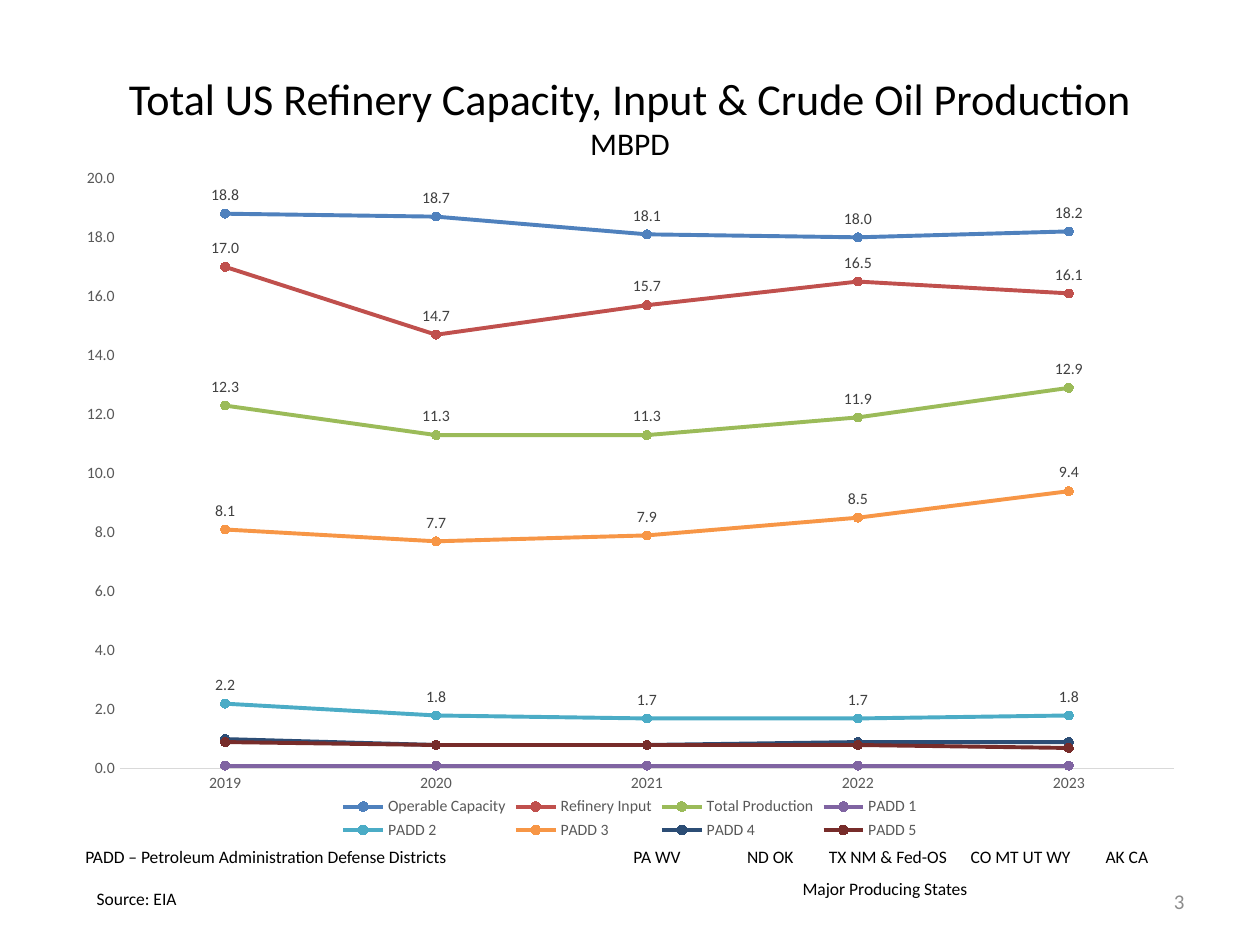
from dataclasses import dataclass

import lxml.etree
import pptx
import pptx.chart.data
import pptx.dml.color
import pptx.enum.chart
import pptx.enum.text
import pptx.oxml
import pptx.oxml.ns
import pptx.util

Cm, Pt = pptx.util.Cm, pptx.util.Pt
ALIGN = pptx.enum.text.PP_ALIGN
ANCHOR = pptx.enum.text.MSO_ANCHOR
FIT = pptx.enum.text.MSO_AUTO_SIZE
CHART = pptx.enum.chart


@dataclass(frozen=True)
class Theme:
    font: str = "Calibri"
    text: str = "000000"
    axis_text: str = "595959"
    label_text: str = "404040"
    page_text: str = "8C8C8C"
    axis_line: str = "D9D9D9"
    title_size: float = 25.2
    unit_size: float = 18
    page_size: float = 12
    note_size: float = 10
    chart_size: float = 9
    series_width: float = 2.25
    axis_width: float = 0.75
    marker_size: int = 5


THEME = Theme()
YEARS = ["2019", "2020", "2021", "2022", "2023"]
SERIES = [
    ("Operable Capacity", [18.8, 18.7, 18.1, 18, 18.2], "4F81BD", True),
    ("Refinery Input", [17, 14.7, 15.7, 16.5, 16.1], "C0504D", True),
    ("Total Production", [12.3, 11.3, 11.3, 11.9, 12.9], "9BBB59", True),
    ("PADD 1", [0.1, 0.1, 0.1, 0.1, 0.1], "8064A2", False),
    ("PADD 2", [2.2, 1.8, 1.7, 1.7, 1.8], "4BACC6", True),
    ("PADD 3", [8.1, 7.7, 7.9, 8.5, 9.4], "F79646", True),
    ("PADD 4", [1, 0.8, 0.8, 0.9, 0.9], "2C4D75", False),
    ("PADD 5", [0.9, 0.8, 0.8, 0.8, 0.7], "772C2A", False),
]
STATES = [
    ("PA WV", 0.25),
    ("ND OK", 2.54),
    ("TX NM & Fed-OS", 4.19),
    ("CO MT UT WY", 7.05),
    ("AK CA", 9.77),
]
PLOT_AREA = {"x": 0.05, "y": 0.03, "w": 0.93, "h": 0.86}


def apply_format(target, values):
    for name, value in values.items():
        setattr(target, name, value)


def rgb(color):
    return pptx.dml.color.RGBColor.from_string(color)


def style_font(font, size, color):
    apply_format(font, {"name": THEME.font, "size": Pt(size), "bold": False})
    font.color.rgb = rgb(color)


def style_line(line, color, width):
    line.color.rgb = rgb(color)
    line.width = Pt(width)


def place(shape, box):
    sides = zip(("left", "top", "width", "height"), map(Cm, box))
    apply_format(shape, dict(sides))


def add_title(slide, box, heading, unit):
    title = slide.shapes.title
    place(title, box)
    apply_format(title.text_frame, {
        "word_wrap": True,
        "auto_size": FIT.NONE,
        "vertical_anchor": ANCHOR.MIDDLE,
    })
    paragraph = title.text_frame.paragraphs[0]
    paragraph.alignment = ALIGN.CENTER
    heading_run = paragraph.add_run()
    heading_run.text = heading
    style_font(heading_run.font, THEME.title_size, THEME.text)
    paragraph.add_line_break()
    unit_run = paragraph.add_run()
    unit_run.text = unit
    style_font(unit_run.font, THEME.unit_size, THEME.text)


def add_note(slide, box, text, size=THEME.note_size, color=THEME.text,
             align=ALIGN.LEFT, anchor=ANCHOR.TOP):
    note = slide.shapes.add_textbox(*map(Cm, box))
    apply_format(note.text_frame, {"word_wrap": True, "vertical_anchor": anchor})
    paragraph = note.text_frame.paragraphs[0]
    paragraph.alignment = align
    run = paragraph.add_run()
    run.text = text
    style_font(run.font, size, color)
    return paragraph


def add_states(slide, box, states):
    text = "".join("\t" + name for name, _ in states)
    properties = add_note(slide, box, text)._p.get_or_add_pPr()
    stops = lxml.etree.SubElement(properties, pptx.oxml.ns.qn("a:tabLst"))
    for _, offset in states:
        lxml.etree.SubElement(stops, pptx.oxml.ns.qn("a:tab"),
                              pos=str(int(Cm(offset))), algn="l")


def set_plot_area(chart, fractions):
    area = chart._chartSpace.chart.plotArea
    for automatic in area.findall(pptx.oxml.ns.qn("c:layout")):
        area.remove(automatic)
    layout = lxml.etree.Element(pptx.oxml.ns.qn("c:layout"))
    manual = lxml.etree.SubElement(layout, pptx.oxml.ns.qn("c:manualLayout"))
    settings = {"layoutTarget": "inner", "xMode": "edge", "yMode": "edge", **fractions}
    for name, value in settings.items():
        lxml.etree.SubElement(manual, pptx.oxml.ns.qn("c:" + name), val=str(value))
    area.insert(0, layout)


def style_series(series, color, labelled):
    series.smooth = False
    style_line(series.format.line, color, THEME.series_width)
    apply_format(series.marker, {
        "style": CHART.XL_MARKER_STYLE.CIRCLE,
        "size": THEME.marker_size,
    })
    series.marker.format.fill.solid()
    series.marker.format.fill.fore_color.rgb = rgb(color)
    style_line(series.marker.format.line, color, THEME.axis_width)
    if labelled:
        labels = series.data_labels
        apply_format(labels, {
            "show_value": True,
            "position": CHART.XL_LABEL_POSITION.ABOVE,
            "number_format": "0.0",
            "number_format_is_linked": False,
        })
        style_font(labels.font, THEME.chart_size, THEME.label_text)


def add_capacity_chart(slide, box):
    capacity = pptx.chart.data.CategoryChartData(number_format="0.0")
    capacity.categories = YEARS
    for name, values, _, _ in SERIES:
        capacity.add_series(name, values)
    chart = slide.shapes.add_chart(
        CHART.XL_CHART_TYPE.LINE_MARKERS, *map(Cm, box), capacity).chart
    apply_format(chart, {"has_title": False, "has_legend": True})
    style_font(chart.font, THEME.note_size, THEME.text)
    chart.plots[0].vary_by_categories = False
    for series, (_, _, color, labelled) in zip(chart.plots[0].series, SERIES):
        style_series(series, color, labelled)

    for axis in (chart.category_axis, chart.value_axis):
        apply_format(axis, {
            "has_major_gridlines": False,
            "major_tick_mark": CHART.XL_TICK_MARK.NONE,
            "minor_tick_mark": CHART.XL_TICK_MARK.NONE,
        })
        style_font(axis.tick_labels.font, THEME.chart_size, THEME.axis_text)
    style_line(chart.category_axis.format.line, THEME.axis_line, THEME.axis_width)
    apply_format(chart.value_axis, {
        "minimum_scale": 0, "maximum_scale": 20, "major_unit": 2})
    apply_format(chart.value_axis.tick_labels, {
        "number_format": "0.0", "number_format_is_linked": False})
    chart.value_axis.format.line.fill.background()

    apply_format(chart.legend, {
        "position": CHART.XL_LEGEND_POSITION.BOTTOM, "include_in_layout": False})
    style_font(chart.legend.font, THEME.chart_size, THEME.axis_text)
    set_plot_area(chart, PLOT_AREA)


def add_footnotes(slide, box):
    left, top, width, height = box
    line = 0.68
    add_note(slide, (left + 0.2, top, 11, line),
             "PADD – Petroleum Administration Defense Districts")
    add_states(slide, (left + 11, top, 11.86, line), STATES)
    producing = add_note(slide, (left + 12.9, top + 0.64, 6.78, line),
                         "Major Producing States")
    producing._p.get_or_add_pPr().set("marL", str(int(Cm(1.76))))
    add_note(slide, (left + 0.43, top + 0.84, 3.38, line), "Source: EIA")
    add_note(slide, (left + width - 5.92, top + 0.71, 5.92, height - 0.71), "3",
             THEME.page_size, THEME.page_text, ALIGN.RIGHT, ANCHOR.MIDDLE)


def main():
    presentation = pptx.Presentation()
    apply_format(presentation, {"slide_width": Cm(25.4), "slide_height": Cm(19.05)})
    slide = presentation.slides.add_slide(presentation.slide_layouts[5])
    margin, width = 1.27, 22.86
    add_title(slide, (margin, 0.76, width, 3.18),
              "Total US Refinery Capacity, Input & Crude Oil Production", "MBPD")
    add_capacity_chart(slide, (margin, 3.18, width, 13.84))
    add_footnotes(slide, (margin, 16.94, width, 1.73))
    presentation.save("out.pptx")


if __name__ == "__main__":
    main()
